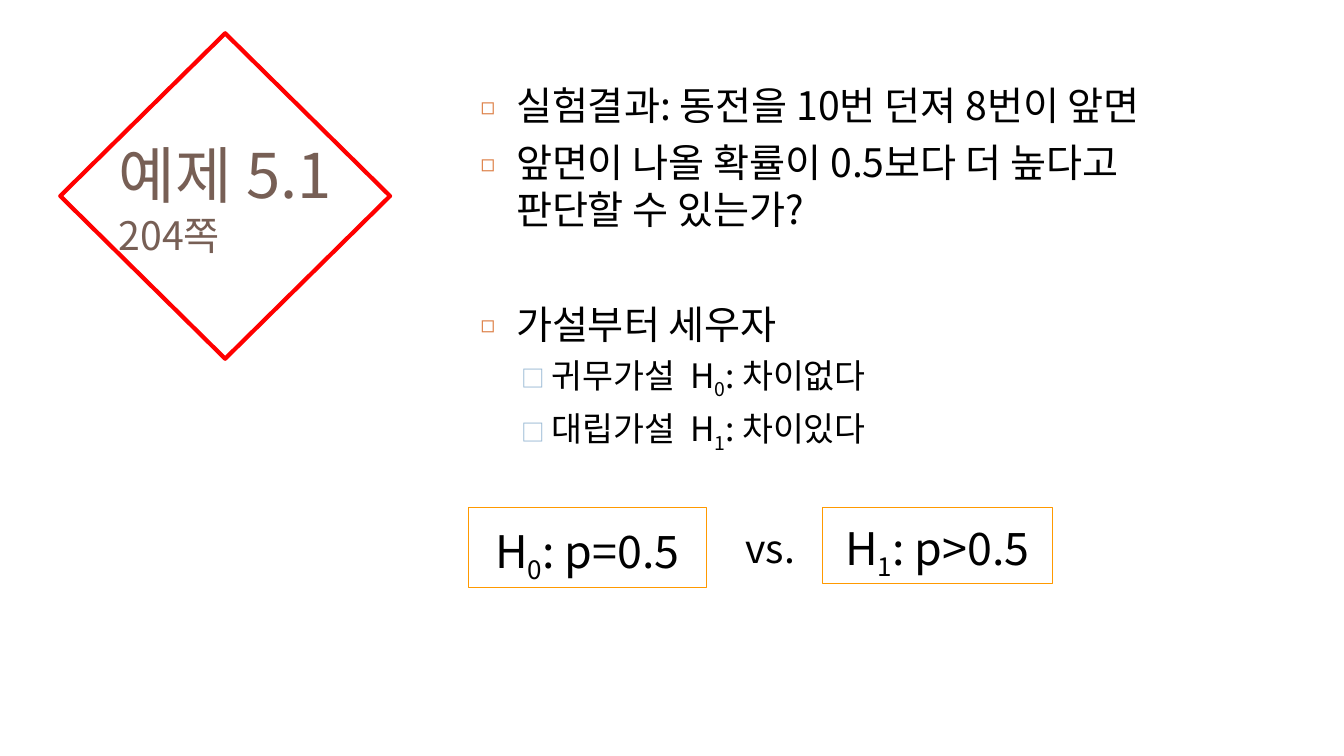
from lxml.etree import SubElement
from pptx import Presentation
from pptx.dml.color import RGBColor
from pptx.enum.shapes import MSO_SHAPE
from pptx.enum.text import MSO_ANCHOR, MSO_AUTO_SIZE, PP_ALIGN
from pptx.oxml.ns import qn
from pptx.util import Cm, Pt

FONT = "Noto Sans CJK KR"
BLACK = RGBColor(0x00, 0x00, 0x00)
BROWN = RGBColor(0x77, 0x5F, 0x55)
RED = RGBColor(0xFF, 0x00, 0x00)
AMBER = RGBColor(0xFF, 0x99, 0x00)
ORANGE = RGBColor(0xDD, 0x80, 0x47)
BLUE = RGBColor(0x94, 0xB6, 0xD2)


def place(shape, left, top, width, height):
    shape.left, shape.top = Cm(left), Cm(top)
    shape.width, shape.height = Cm(width), Cm(height)


def add_run(paragraph, text, size, color=BLACK, subscript=False):
    run = paragraph.add_run()
    run.text = text
    run.font.size = Pt(size)
    run.font.name = FONT
    run.font.color.rgb = color
    properties = run.font._element
    SubElement(properties, qn("a:ea")).set("typeface", FONT)
    if subscript:
        properties.set("baseline", "-25000")


def add_hypothesis(paragraph, symbol, index, statement, size):
    add_run(paragraph, symbol, size)
    add_run(paragraph, index, size, subscript=True)
    add_run(paragraph, statement, size)


def set_bullet(paragraph, symbol, color, percent, left, hanging):
    properties = paragraph._p.get_or_add_pPr()
    properties.set("marL", str(Cm(left)))
    properties.set("indent", str(-Cm(hanging)))
    bullet_color = SubElement(properties, qn("a:buClr"))
    SubElement(bullet_color, qn("a:srgbClr")).set("val", str(color))
    SubElement(properties, qn("a:buSzPct")).set("val", str(percent * 1000))
    SubElement(properties, qn("a:buFont")).set("typeface", FONT)
    SubElement(properties, qn("a:buChar")).set("char", symbol)


def add_item(frame, level=0, space=7):
    first = not frame.paragraphs[0].runs
    paragraph = frame.paragraphs[0] if first else frame.add_paragraph()
    paragraph.level = level
    paragraph.space_before = Pt(space)
    if level == 0:
        set_bullet(paragraph, "◻", ORANGE, 60, 0.89, 0.89)
    else:
        set_bullet(paragraph, "□", BLUE, 70, 1.78, 0.76)
    return paragraph


def add_outline(slide, kind, color, weight, *box):
    shape = slide.shapes.add_shape(kind, *(Cm(length) for length in box))
    shape.shadow.inherit = False
    shape.fill.background()
    shape.line.color.rgb = color
    shape.line.width = Pt(weight)
    return shape


def add_hypothesis_box(slide, index, statement, *box):
    frame = add_outline(slide, MSO_SHAPE.RECTANGLE, AMBER, 0.75, *box).text_frame
    frame.vertical_anchor = MSO_ANCHOR.MIDDLE
    paragraph = frame.paragraphs[0]
    paragraph.alignment = PP_ALIGN.CENTER
    paragraph.line_spacing = 1.2
    paragraph.space_before = Pt(7)
    add_hypothesis(paragraph, "H", index, statement, 32)


def fill_title(title):
    place(title, 2.74, 2.9, 6.63, 4.17)
    frame = title.text_frame
    frame.auto_size = MSO_AUTO_SIZE.NONE
    frame.vertical_anchor = MSO_ANCHOR.MIDDLE
    heading = frame.paragraphs[0]
    heading.alignment = PP_ALIGN.LEFT
    add_run(heading, "예제 5.1", 44, BROWN)
    heading.add_line_break()
    add_run(heading, "204쪽", 28, BROWN)


def fill_body(body):
    place(body, 11.86, 1.93, 19.28, 9.4)
    frame = body.text_frame
    frame.auto_size = MSO_AUTO_SIZE.NONE
    for text, space in (
        ("실험결과: 동전을 10번 던져 8번이 앞면", 7),
        ("앞면이 나올 확률이 0.5보다 더 높다고 판단할 수 있는가?", 7),
        ("가설부터 세우자", 48),
    ):
        add_run(add_item(frame, space=space), text, 28)
    for name, index, claim in (
        ("귀무가설", "0", "차이없다"),
        ("대립가설", "1", "차이있다"),
    ):
        item = add_item(frame, level=1, space=5.5)
        add_hypothesis(item, f"{name}  H", index, f": {claim}", 24)


def add_versus(slide):
    label = slide.shapes.add_textbox(Cm(18.54), Cm(13.08), Cm(1.88), Cm(1.45))
    label.text_frame.word_wrap = False
    add_run(label.text_frame.paragraphs[0], "vs.", 28)


def main():
    deck = Presentation()
    deck.slide_width, deck.slide_height = Cm(33.87), Cm(19.05)
    slide = deck.slides.add_slide(deck.slide_layouts[1])
    fill_title(slide.shapes.title)
    fill_body(slide.placeholders[1])
    add_outline(slide, MSO_SHAPE.DIAMOND, RED, 3, 1.52, 0.84, 8.31, 8.2)
    add_hypothesis_box(slide, "0", ": p=0.5", 11.81, 12.8, 5.99, 2.01)
    add_hypothesis_box(slide, "1", ": p>0.5", 20.73, 12.78, 5.79, 1.93)
    add_versus(slide)
    deck.save("out.pptx")


if __name__ == "__main__":
    main()
